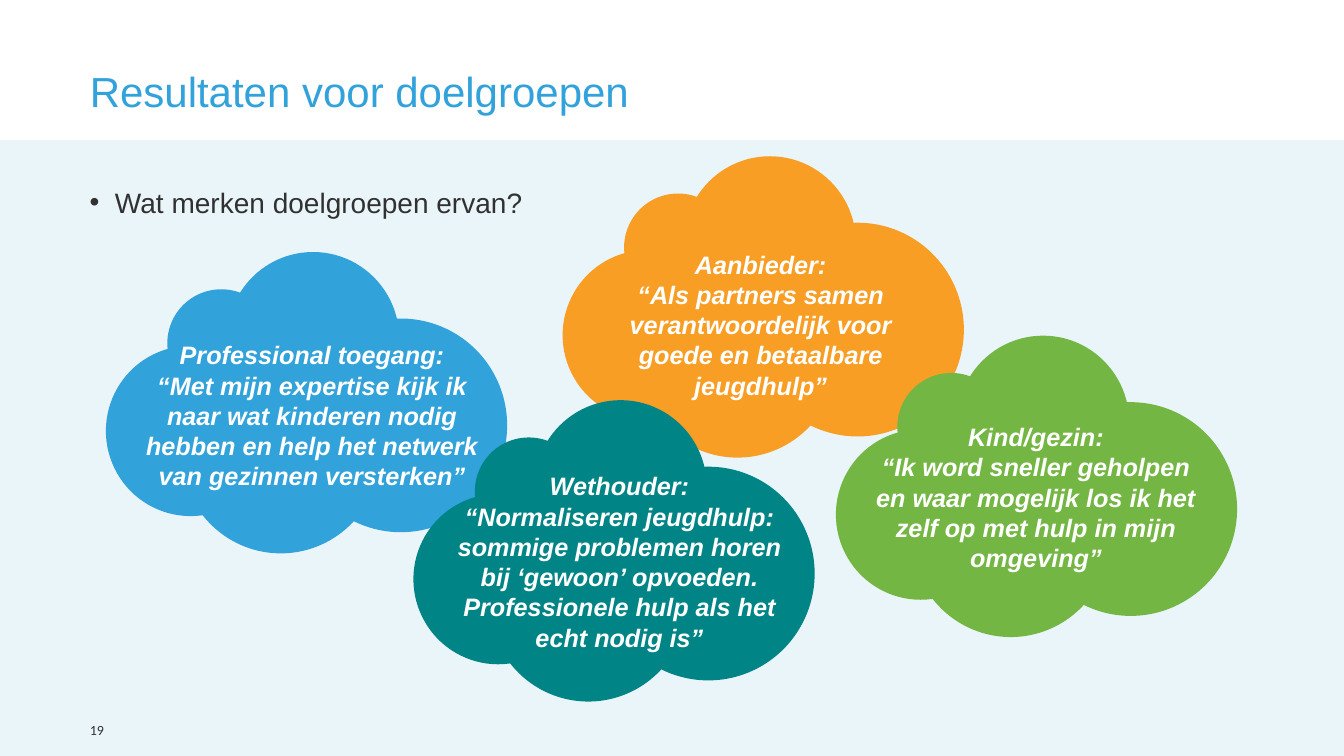
from lxml import etree
from pptx import Presentation
from pptx.dml.color import RGBColor
from pptx.enum.shapes import MSO_SHAPE
from pptx.enum.text import MSO_ANCHOR, PP_ALIGN
from pptx.oxml.ns import qn
from pptx.util import Inches, Pt

OVAL, RECTANGLE = MSO_SHAPE.OVAL, MSO_SHAPE.RECTANGLE
TOP, BOTTOM = MSO_ANCHOR.TOP, MSO_ANCHOR.BOTTOM
CENTER = PP_ALIGN.CENTER

BLUE = RGBColor(0x32, 0xA2, 0xDB)
ORANGE = RGBColor(0xF8, 0x9E, 0x25)
TEAL = RGBColor(0x00, 0x84, 0x86)
GREEN = RGBColor(0x74, 0xB6, 0x43)
PALE = RGBColor(0xEA, 0xF5, 0xFA)
DARK = RGBColor(0x31, 0x31, 0x31)
WHITE = RGBColor(0xFF, 0xFF, 0xFF)

TITLE_FONT = {"name": "Arial", "size": Pt(30), "color": BLUE}
BODY_FONT = {"name": "Arial", "size": Pt(20), "color": DARK}
NUMBER_FONT = {"name": "Calibri", "size": Pt(10), "color": DARK}
QUOTE_FONT = {"name": "Arial", "size": Pt(18), "color": WHITE,
              "bold": True, "italic": True}

# Left, top, width and height of each puff, from the corner of its cloud
PUFFS = [
    (1.20, 0, 1.71, 1.72),
    (1.87, 0.66, 2.11, 2.12),
    (0.75, 1.01, 1.97, 1.98),
    (0, 0.93, 1.68, 1.69),
    (0.61, 0.37, 1.07, 1.07),
]

# Colour, cloud corner, text offset, text height, speaker and quote
CLOUDS = [
    (BLUE, (1.05, 2.5), (0.38, 0.87), 1.51, "Professional toegang:",
     "“Met mijn expertise kijk ik naar wat kinderen nodig hebben "
     "en help het netwerk van gezinnen versterken”"),
    (ORANGE, (5.58, 1.55), (0.3, 0.92), 1.51, "Aanbieder:",
     "“Als partners samen verantwoordelijk voor goede en betaalbare jeugdhulp”"),
    (TEAL, (4.1, 3.97), (0.38, 0.7), 1.82, "Wethouder:",
     "“Normaliseren jeugdhulp: sommige problemen horen bij ‘gewoon’ opvoeden. "
     "Professionele hulp als het echt nodig is”"),
    (GREEN, (8.29, 3.33), (0.32, 0.85), 1.51, "Kind/gezin:",
     "“Ik word sneller geholpen en waar mogelijk los ik het zelf op "
     "met hulp in mijn omgeving”"),
]


def add_filled(shapes, kind, box, color):
    shape = shapes.add_shape(kind, *map(Inches, box))
    shape.shadow.inherit = False
    shape.fill.solid()
    shape.fill.fore_color.rgb = color
    shape.line.fill.background()


def add_text(page, box, lines, font_format, anchor=TOP, align=None, spacing=None, bullet=False):
    frame = page.shapes.add_textbox(*map(Inches, box)).text_frame
    frame.word_wrap = True
    frame.vertical_anchor = anchor
    for side in ("left", "top", "right", "bottom"):
        setattr(frame, f"margin_{side}", 0)
    for index, line in enumerate(lines):
        para = frame.add_paragraph() if index else frame.paragraphs[0]
        para.alignment = align
        para.line_spacing = spacing
        if bullet:
            add_bullet(para)
        span = para.add_run()
        span.text = line
        for name, value in font_format.items():
            if name == "color":
                span.font.color.rgb = value
            else:
                setattr(span.font, name, value)


def add_bullet(para):
    properties = para._p.get_or_add_pPr()
    properties.set("marL", str(Inches(0.25)))
    properties.set("indent", str(Inches(-0.25)))
    etree.SubElement(properties, qn("a:buFont"), typeface="Arial")
    etree.SubElement(properties, qn("a:buChar"), char="•")


def add_cloud(page, color, corner, text_offset, text_height, speaker, quote):
    left, top = corner
    group = page.shapes.add_group_shape()
    for x, y, width, height in PUFFS:
        add_filled(group.shapes, OVAL, (left + x, top + y, width, height), color)
    text_box = (left + text_offset[0], top + text_offset[1], 3.33, text_height)
    add_text(page, text_box, [speaker, quote], QUOTE_FONT, align=CENTER)


def add_frame(page):
    """Place the background panel, title, lead question and page number."""
    add_filled(page.shapes, RECTANGLE, (0, 1.39, 13.33, 6.11), PALE)
    add_text(page, (0.89, 0, 11.55, 1.15), ["Resultaten voor doelgroepen"],
             TITLE_FONT, anchor=BOTTOM, spacing=Pt(30))
    add_text(page, (0.89, 1.77, 8.06, 5.1), ["Wat merken doelgroepen ervan?"],
             BODY_FONT, spacing=Pt(29), bullet=True)
    add_text(page, (0.89, 7.1, 1.42, 0.23), ["19"], NUMBER_FONT, anchor=BOTTOM)


def main():
    deck = Presentation()
    deck.slide_width = Inches(13.33)
    deck.slide_height = Inches(7.5)
    page = deck.slides.add_slide(deck.slide_layouts[6])
    add_frame(page)
    for cloud in CLOUDS:
        add_cloud(page, *cloud)
    deck.save("out.pptx")


if __name__ == "__main__":
    main()
